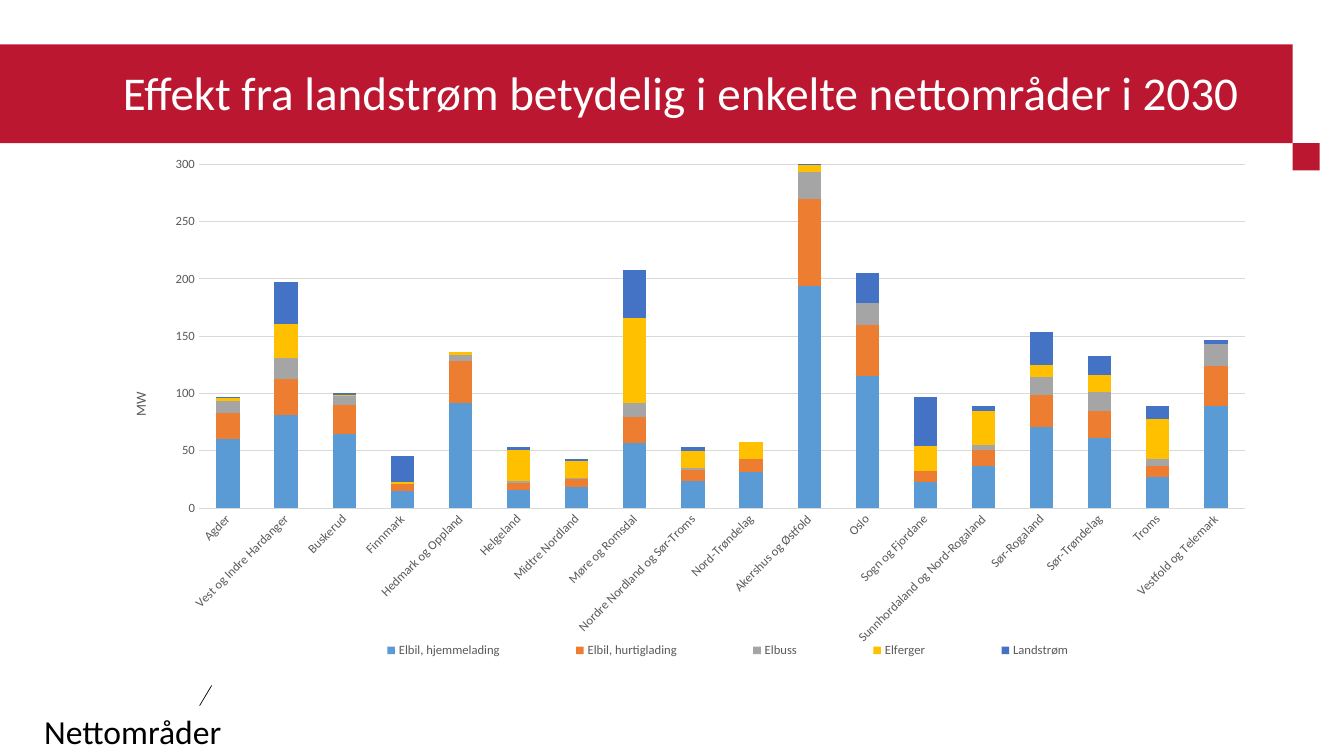
from lxml.etree import SubElement
from pptx import Presentation
from pptx.chart.data import CategoryChartData as Data
from pptx.dml.color import RGBColor
from pptx.enum.chart import XL_CHART_TYPE as Kind, XL_LEGEND_POSITION as Spot, XL_TICK_MARK as Tick
from pptx.enum.shapes import MSO_CONNECTOR as Link, MSO_SHAPE as Form
from pptx.enum.text import MSO_ANCHOR as Anchor
from pptx.oxml import parse_xml
from pptx.oxml.ns import nsdecls, qn
from pptx.util import Inches, Pt

AREAS = [
    "Agder", "Vest og Indre Hardanger", "Buskerud", "Finnmark",
    "Hedmark og Oppland", "Helgeland", "Midtre Nordland", "Møre og Romsdal",
    "Nordre Nordland og Sør-Troms", "Nord-Trøndelag", "Akershus og Østfold",
    "Oslo", "Sogn og Fjordane", "Sunnhordaland og Nord-Rogaland",
    "Sør-Rogaland", "Sør-Trøndelag", "Troms", "Vestfold og Telemark",
]
LOADS = [
    ("Elbil, hjemmelading", "5B9BD5",
     [60, 81, 65, 15, 92, 16, 18, 57, 24, 31, 194, 115, 23, 37, 71, 61, 27, 89]),
    ("Elbil, hurtiglading", "ED7D31",
     [23, 32, 25, 6, 36, 6, 7, 22, 9, 12, 76, 45, 9, 14, 28, 24, 10, 35]),
    ("Elbuss", "A5A5A5",
     [10, 18, 8, 0, 6, 2, 1, 13, 2, 0, 23, 19, 0, 4, 15, 16, 6, 19]),
    ("Elferger", "FFC000",
     [3, 30, 1, 2, 2, 27, 15, 74, 15, 15, 6, 0, 22, 30, 11, 15, 35, 0]),
    ("Landstrøm", "4472C4",
     [1, 36, 1, 22, 0, 2, 2, 42, 3, 0, 2, 26, 43, 4, 29, 17, 11, 4]),
]


def color(code):
    return RGBColor.from_string(code)


def paint(fill, code):
    fill.solid()
    fill.fore_color.rgb = color(code)


def place(node, index, target=None, **parts):
    old = node.find(qn("c:layout"))
    if old is not None:
        node.remove(old)
    layout = parse_xml(f"<c:layout {nsdecls('c')}><c:manualLayout/></c:layout>")
    manual = layout[0]
    if target:
        SubElement(manual, qn("c:layoutTarget"), val=target)
    for key in ("x", "y"):
        SubElement(manual, qn(f"c:{key}Mode"), val="edge")
    for key, value in parts.items():
        SubElement(manual, qn(f"c:{key}"), val=str(value))
    node.insert(index, layout)


class Deck:
    face = "Calibri"
    red = "BB1730"
    gray = "595959"
    grid = "D9D9D9"

    def __init__(self):
        self.show = Presentation()
        self.show.slide_width = Inches(13.33)
        self.show.slide_height = Inches(7.5)
        self.slide = self.show.slides.add_slide(self.show.slide_layouts[6])
        self.shapes = self.slide.shapes

    def style(self, font, size, code):
        font.name = self.face
        font.size = Pt(size)
        font.bold = False
        font.color.rgb = color(code)

    def block(self, *box):
        shape = self.shapes.add_shape(Form.RECTANGLE, *map(Inches, box))
        shape.shadow.inherit = False
        paint(shape.fill, self.red)
        shape.line.fill.background()

    def text(self, words, box, size=24, code="000000", wrap=False,
             anchor=Anchor.TOP, space=1.0):
        frame = self.shapes.add_textbox(*map(Inches, box)).text_frame
        frame.word_wrap = wrap
        frame.vertical_anchor = anchor
        para = frame.paragraphs[0]
        para.line_spacing = space
        run = para.add_run()
        run.text = words
        self.style(run.font, size, code)

    def arrow(self, *ends):
        line = self.shapes.add_connector(Link.STRAIGHT, *map(Inches, ends))
        line.line.color.rgb = color("000000")
        line.line.width = Pt(0.5)
        SubElement(line.line._get_or_add_ln(), qn("a:tailEnd"), type="triangle")
        SubElement(line._element.spPr, qn("a:effectLst"))

    def axis(self, axis):
        axis.major_tick_mark = axis.minor_tick_mark = Tick.NONE
        axis.format.line.fill.background()
        self.style(axis.tick_labels.font, 9, self.gray)

    def chart(self, areas, loads, box):
        data = Data(number_format="0")
        data.categories = areas
        for name, _, values in loads:
            data.add_series(name, values)
        chart = self.shapes.add_chart(
            Kind.COLUMN_STACKED, *map(Inches, box), data).chart
        self.style(chart.font, 10, "000000")
        chart.has_title = False
        space = chart._chartSpace
        back = parse_xml(
            f"<c:spPr {nsdecls('c', 'a')}><a:solidFill><a:srgbClr val='FFFFFF'/>"
            "</a:solidFill><a:ln><a:noFill/></a:ln></c:spPr>")
        space.find(qn("c:chart")).addnext(back)

        plot = chart.plots[0]
        plot.gap_width = 150
        plot.overlap = 100
        plot.vary_by_categories = False
        for series, (_, code, _) in zip(plot.series, loads):
            paint(series.format.fill, code)

        base, scale = chart.category_axis, chart.value_axis
        self.axis(base)
        self.axis(scale)
        base._element.txPr.bodyPr.set("rot", "-2700000")
        scale.minimum_scale = 0
        scale.maximum_scale = 300
        scale.major_unit = 50
        scale.tick_labels.number_format = "0"
        scale.tick_labels.number_format_is_linked = False
        scale.has_major_gridlines = True
        rule = scale.major_gridlines.format.line
        rule.color.rgb = color(self.grid)
        rule.width = Pt(0.75)
        title = scale.axis_title
        frame = title.text_frame
        frame.text = "MW"
        frame._txBody.bodyPr.set("rot", "-5400000")
        self.style(frame.paragraphs[0].runs[0].font, 10, self.gray)

        chart.has_legend = True
        legend = chart.legend
        legend.position = Spot.BOTTOM
        legend.include_in_layout = False
        self.style(legend.font, 9, self.gray)
        area = space.find(".//" + qn("c:plotArea"))
        place(area, 0, "inner", x=0.08, y=0.03, w=0.9, h=0.64)
        place(title._element, 1, x=0.02, y=0.45)
        place(legend._element, 1, x=0.18, y=0.91, w=0.71, h=0.05)


def main():
    deck = Deck()
    deck.block(0, 0.44, 12.82, 0.98)
    deck.block(12.82, 1.42, 0.27, 0.27)
    deck.text("Effekt fra landstrøm betydelig i enkelte nettområder i 2030",
              (1.12, 0.42, 11.32, 1.05), size=33.6, code="FFFFFF", wrap=True,
              anchor=Anchor.MIDDLE, space=0.9)
    deck.text("Nettområder", (0.34, 7, 1.98, 0.5))
    deck.arrow(1.98, 7, 2.38, 6.33)
    deck.chart(AREAS, LOADS, (1.05, 1.47, 11.53, 5.33))
    deck.show.save("out.pptx")


if __name__ == "__main__":
    main()
